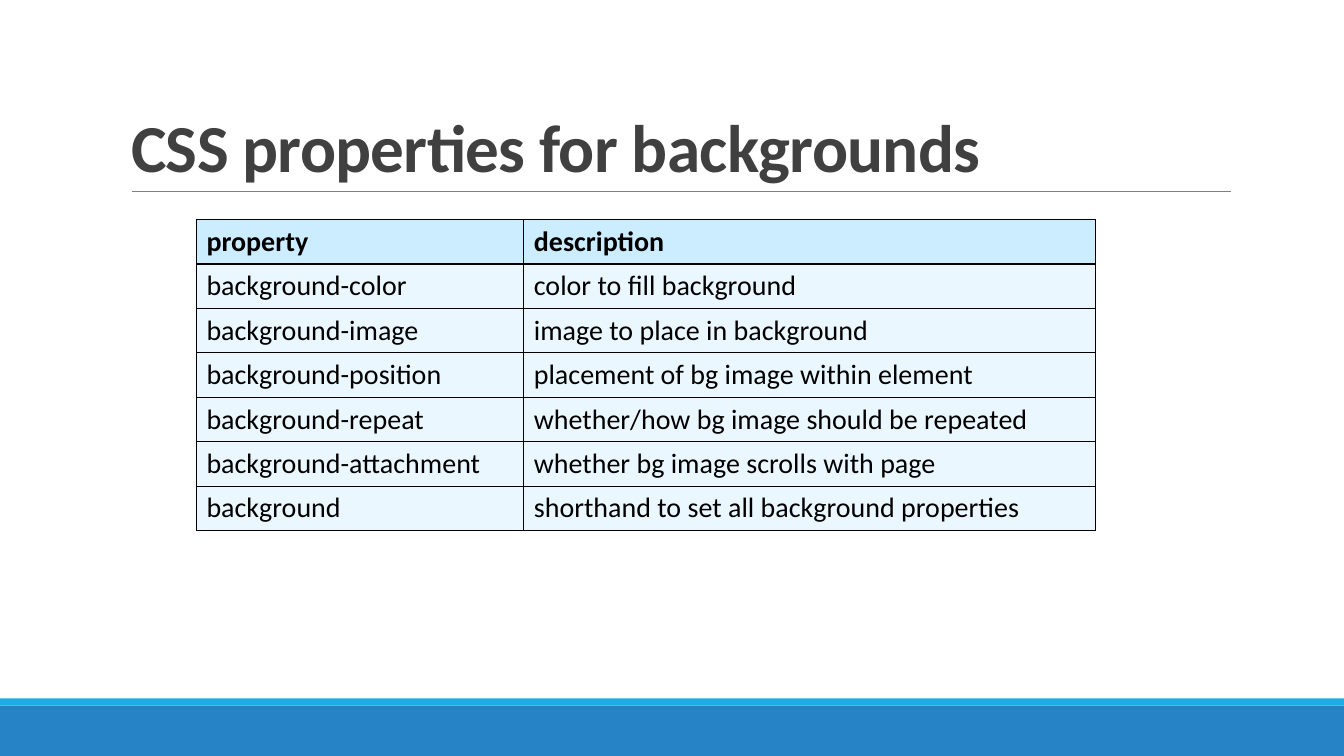
from dataclasses import dataclass

from lxml.etree import SubElement
from pptx import Presentation
from pptx.dml.color import RGBColor
from pptx.enum.shapes import MSO_CONNECTOR, MSO_SHAPE
from pptx.enum.text import MSO_ANCHOR, MSO_AUTO_SIZE, PP_ALIGN
from pptx.oxml.ns import qn
from pptx.slide import Slide
from pptx.table import _Cell
from pptx.text.text import Font
from pptx.util import Cm, Pt

BLUE = RGBColor(0x26, 0x83, 0xC6)
CYAN = RGBColor(0x1C, 0xAD, 0xE4)
RULE_GREY = RGBColor(0x80, 0x80, 0x80)
TITLE_GREY = RGBColor(0x40, 0x40, 0x40)
BLACK = RGBColor(0x00, 0x00, 0x00)
HEADER_FILL = RGBColor(0xCC, 0xEC, 0xFF)
BODY_FILL = RGBColor(0xEB, 0xF7, 0xFF)

SLIDE_WIDTH, SLIDE_HEIGHT = Cm(33.87), Cm(19.05)
COLUMN_WIDTHS = (Cm(8.25), Cm(14.4))
ROW_HEIGHT = Cm(1.12)


@dataclass(frozen=True)
class Band:
    top: Cm
    height: Cm
    color: RGBColor


@dataclass(frozen=True)
class Entry:
    name: str
    description: str


FOOTER_BANDS = (
    Band(Cm(17.78), Cm(1.27), BLUE),
    Band(Cm(17.6), Cm(0.18), CYAN),
)

ENTRIES = (
    Entry("property", "description"),
    Entry("background-color", "color to fill background"),
    Entry("background-image", "image to place in background"),
    Entry("background-position", "placement of bg image within element"),
    Entry("background-repeat", "whether/how bg image should be repeated"),
    Entry("background-attachment", "whether bg image scrolls with page"),
    Entry("background", "shorthand to set all background properties"),
)


def apply_format(target: object, values: dict) -> None:
    for attribute, value in values.items():
        setattr(target, attribute, value)


def format_font(font: Font, size: int, color: RGBColor, bold: bool) -> None:
    apply_format(font, {"name": "Calibri", "size": Pt(size), "bold": bold})
    font.color.rgb = color


def draw_band(slide: Slide, band: Band) -> None:
    bar = slide.shapes.add_shape(
        MSO_SHAPE.RECTANGLE, 0, band.top, SLIDE_WIDTH, band.height)
    bar.shadow.inherit = False
    bar.fill.solid()
    bar.fill.fore_color.rgb = band.color
    bar.line.fill.background()


def draw_rule(slide: Slide) -> None:
    rule = slide.shapes.add_connector(
        MSO_CONNECTOR.STRAIGHT, Cm(3.32), Cm(4.82), Cm(31.01), Cm(4.82))
    rule.line.color.rgb = RULE_GREY
    rule.line.width = Pt(0.5)
    SubElement(rule._element.spPr, qn("a:effectLst"))


def write_title(slide: Slide, wording: str) -> None:
    title = slide.shapes.title
    apply_format(title, {"left": Cm(3.05), "top": Cm(0.79),
                         "width": Cm(27.94), "height": Cm(4.04)})
    apply_format(title.text_frame, {"text": wording, "word_wrap": True,
                                    "auto_size": MSO_AUTO_SIZE.NONE,
                                    "vertical_anchor": MSO_ANCHOR.BOTTOM})
    paragraph = title.text_frame.paragraphs[0]
    apply_format(paragraph, {"alignment": PP_ALIGN.LEFT, "line_spacing": 0.85})
    heading = paragraph.runs[0]
    format_font(heading.font, 48, TITLE_GREY, True)
    heading.font._element.set("spc", "-50")


def add_borders(cell: _Cell) -> None:
    properties = cell._tc.get_or_add_tcPr()
    for side in ("lnL", "lnR", "lnT", "lnB"):
        border = SubElement(properties, qn(f"a:{side}"), w=str(Pt(1)))
        fill = SubElement(border, qn("a:solidFill"))
        SubElement(fill, qn("a:srgbClr"), val=str(BLACK))


def write_cell(cell: _Cell, wording: str, is_header: bool) -> None:
    apply_format(cell, {"text": wording, "vertical_anchor": MSO_ANCHOR.MIDDLE})
    format_font(cell.text_frame.paragraphs[0].runs[0].font, 20, BLACK, is_header)
    add_borders(cell)
    cell.fill.solid()
    cell.fill.fore_color.rgb = HEADER_FILL if is_header else BODY_FILL


def draw_property_table(slide: Slide) -> None:
    properties = slide.shapes.add_table(
        len(ENTRIES), len(COLUMN_WIDTHS), Cm(4.95), Cm(5.53),
        sum(COLUMN_WIDTHS), ROW_HEIGHT * len(ENTRIES)).table
    properties.horz_banding = False
    for column, width in zip(properties.columns, COLUMN_WIDTHS):
        column.width = width
    for index, (row, entry) in enumerate(zip(properties.rows, ENTRIES)):
        row.height = ROW_HEIGHT
        for cell, wording in zip(row.cells, (entry.name, entry.description)):
            write_cell(cell, wording, index == 0)


def main() -> None:
    presentation = Presentation()
    apply_format(presentation, {"slide_width": SLIDE_WIDTH,
                                "slide_height": SLIDE_HEIGHT})
    slide = presentation.slides.add_slide(presentation.slide_layouts[5])
    for band in FOOTER_BANDS:
        draw_band(slide, band)
    draw_rule(slide)
    write_title(slide, "CSS properties for backgrounds")
    draw_property_table(slide)
    presentation.save("out.pptx")


if __name__ == "__main__":
    main()
